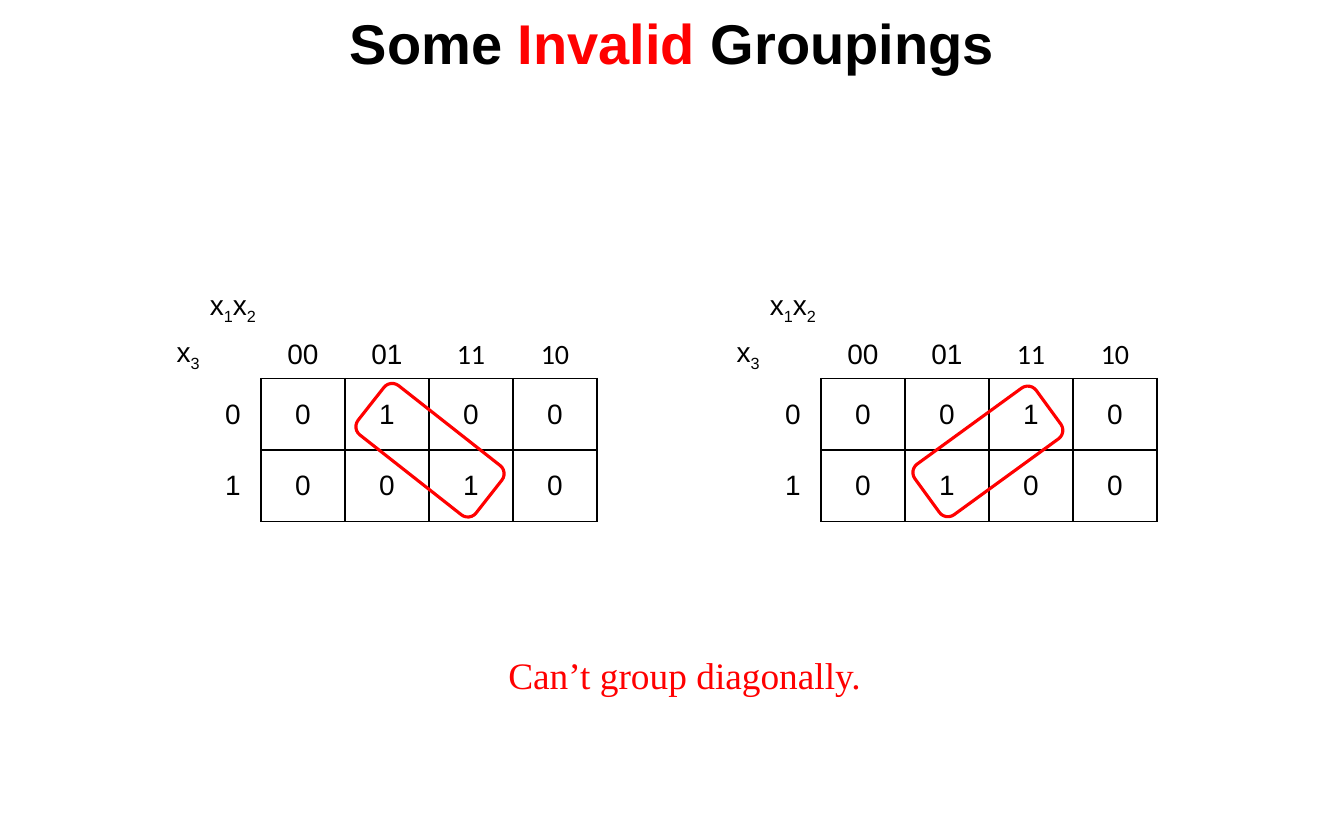
import pptx
import pptx.dml.color
import pptx.enum.shapes
import pptx.enum.text
import pptx.oxml
import pptx.oxml.ns
import pptx.util

Inches, Pt = pptx.util.Inches, pptx.util.Pt
RGBColor = pptx.dml.color.RGBColor
ANCHOR = pptx.enum.text.MSO_ANCHOR
ALIGN = pptx.enum.text.PP_ALIGN

BLACK = RGBColor(0, 0, 0)
WHITE = RGBColor(255, 255, 255)
RED = RGBColor(255, 0, 0)

TITLE = [("Some ", BLACK), ("Invalid", RED), (" Groupings", BLACK)]
CAPTION = "Can’t group diagonally."
COLUMN_VARIABLES = ["x", "1", "x", "2"]  # every second run is a subscript
ROW_VARIABLE = ["x", "3"]
COLUMN_CODES = ["00", "01", "11", "10"]
ROW_CODES = ["0", "1"]
CODE_FONTS = {"11": "Calibri", "10": "Calibri"}

MAPS = [
    {"left": 1.33, "values": ["0100", "0010"],
     "ring": (3.56, 3.35), "rotation": 308.2},
    {"left": 6.33, "values": ["0010", "0100"],
     "ring": (8.54, 3.36), "rotation": 234},
]
MAP_TOP = 2.54
COLUMN_WIDTHS = [0.5, 0.5, 0.75, 0.75, 0.75, 0.75]
ROW_HEIGHTS = [0.42, 0.42, 0.64, 0.64]
HEADERS = 2  # leading rows and columns that hold labels
RING_SIZE = (0.56, 1.34)


def add_run(paragraph, text, color, size, name="Arial", bold=False):
    run = paragraph.add_run()
    run.text = text
    formats = {"size": Pt(size), "name": name, "bold": bold}
    for attribute, value in formats.items():
        setattr(run.font, attribute, value)
    run.font.color.rgb = color
    return run


def add_text(slide, box, runs, frame_format, alignment, **font):
    shape = slide.shapes.add_textbox(*map(Inches, box))
    for attribute, value in frame_format.items():
        setattr(shape.text_frame, attribute, value)
    paragraph = shape.text_frame.paragraphs[0]
    paragraph.alignment = alignment
    for text, color in runs:
        add_run(paragraph, text, color, **font)


def set_border(cell, side, color, width):
    cell._tc.get_or_add_tcPr().append(pptx.oxml.parse_xml(
        f'<a:ln{side} {pptx.oxml.ns.nsdecls("a")} w="{Pt(width)}">'
        f'<a:solidFill><a:srgbClr val="{color}"/></a:solidFill></a:ln{side}>'))


def in_grid(row, column):
    return (HEADERS <= row < len(ROW_HEIGHTS)
            and HEADERS <= column < len(COLUMN_WIDTHS))


def format_cell(cell, row, column):
    """Black borders wherever an edge touches the value grid, white elsewhere."""
    neighbours = {"L": (row, column - 1), "R": (row, column + 1),
                  "T": (row - 1, column), "B": (row + 1, column)}
    for side, neighbour in neighbours.items():
        black = in_grid(row, column) or in_grid(*neighbour)
        between_headers = (row, side) in [(0, "B"), (1, "T")]
        set_border(cell, side, BLACK if black else WHITE,
                   3 if between_headers else 1)
    cell.fill.solid()
    cell.fill.fore_color.rgb = WHITE
    cell.vertical_anchor = ANCHOR.MIDDLE
    for margin in ("left", "right", "top", "bottom"):
        setattr(cell, f"margin_{margin}", 0)


def cell_rows(values):
    """Each cell as a list of runs, plain and subscript in turn."""
    yield [[], COLUMN_VARIABLES] + [[]] * len(COLUMN_CODES)
    yield [ROW_VARIABLE, []] + [[code] for code in COLUMN_CODES]
    for code, digits in zip(ROW_CODES, values):
        yield [[], [code]] + [[digit] for digit in digits]


def add_map(slide, left, values):
    frame = slide.shapes.add_table(
        len(ROW_HEIGHTS), len(COLUMN_WIDTHS), Inches(left), Inches(MAP_TOP),
        Inches(sum(COLUMN_WIDTHS)), Inches(sum(ROW_HEIGHTS)))
    table = frame.table
    table.first_row = table.horz_banding = False
    for column, width in zip(table.columns, COLUMN_WIDTHS):
        column.width = Inches(width)
    for row, height in zip(table.rows, ROW_HEIGHTS):
        row.height = Inches(height)
    for row, contents in enumerate(cell_rows(values)):
        for column, texts in enumerate(contents):
            cell = table.cell(row, column)
            format_cell(cell, row, column)
            paragraph = cell.text_frame.paragraphs[0]
            paragraph.alignment = ALIGN.CENTER
            for index, text in enumerate(texts):
                run = add_run(paragraph, text, BLACK, 18,
                              CODE_FONTS.get(text, "Arial"))
                if index % 2:
                    run._r.get_or_add_rPr().set("baseline", "-25000")
    table.cell(1, 0).margin_left = Inches(0.2)


def add_ring(slide, position, rotation):
    ring = slide.shapes.add_shape(
        pptx.enum.shapes.MSO_SHAPE.ROUNDED_RECTANGLE,
        *map(Inches, position + RING_SIZE))
    ring.rotation = rotation
    ring.shadow.inherit = False
    ring.fill.background()
    ring.line.color.rgb = RED
    ring.line.width = Pt(2)


def main():
    presentation = pptx.Presentation()
    presentation.slide_width = Inches(12)
    presentation.slide_height = Inches(7.5)
    slide = presentation.slides.add_slide(presentation.slide_layouts[6])

    add_text(slide, (1, 0, 10, 0.75), TITLE,
             {"word_wrap": True, "vertical_anchor": ANCHOR.MIDDLE},
             ALIGN.CENTER, size=36, bold=True)
    for group in MAPS:
        add_map(slide, group["left"], group["values"])
    for group in MAPS:
        add_ring(slide, group["ring"], group["rotation"])
    add_text(slide, (4.44, 5.77, 3.38, 0.51), [(CAPTION, RED)],
             {"word_wrap": False,
              "auto_size": pptx.enum.text.MSO_AUTO_SIZE.SHAPE_TO_FIT_TEXT},
             ALIGN.LEFT, size=24, name="Times New Roman")

    presentation.save("out.pptx")


if __name__ == "__main__":
    main()
